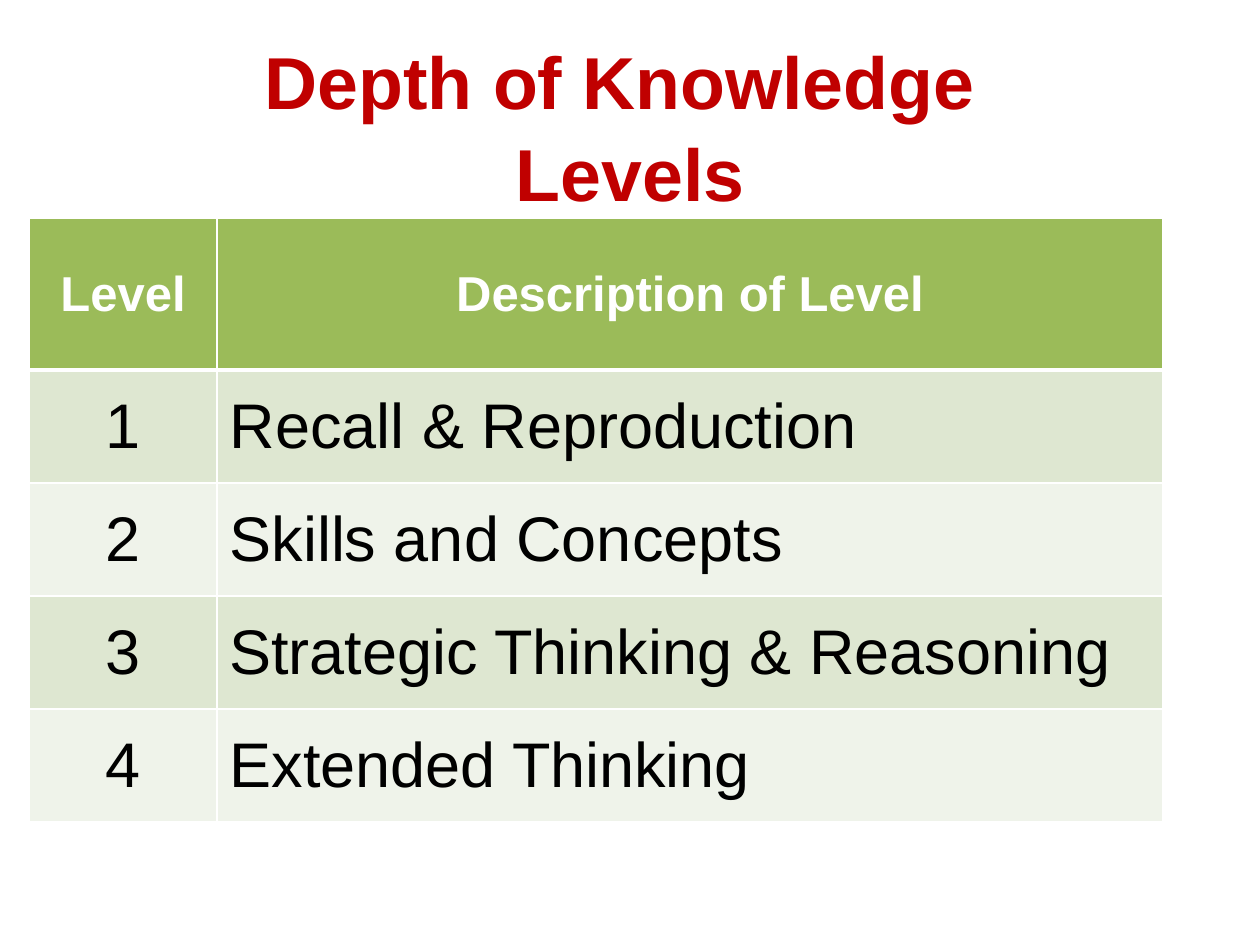
from lxml.etree import SubElement
from pptx import Presentation
from pptx.dml.color import RGBColor
from pptx.enum.text import MSO_ANCHOR, MSO_AUTO_SIZE, PP_ALIGN
from pptx.oxml.ns import qn
from pptx.util import Pt

PX = 914400 / 126
LEVELS = [
    ("Level", "Description of Level"),
    ("1", "Recall & Reproduction"),
    ("2", "Skills and Concepts"),
    ("3", "Strategic Thinking & Reasoning"),
    ("4", "Extended Thinking"),
]
HEADER_FONT = {"name": "Arial", "size": Pt(28), "bold": True}
BODY_FONT = {"name": "Arial", "size": Pt(36), "bold": False}
TITLE_FONT = {"name": "Arial", "size": Pt(42), "bold": True}


def px(length):
    return round(length * PX)


def rgb(code):
    return RGBColor.from_string(code)


def apply(target, values):
    for name, value in values.items():
        setattr(target, name, value)


def format_font(font, values, color):
    apply(font, values)
    font.color.rgb = rgb(color)


def add_borders(cell, widths, color):
    properties = cell._tc.get_or_add_tcPr()
    for side, width in widths.items():
        line = SubElement(properties, qn(f"a:ln{side}"), w=str(Pt(width)))
        fill = SubElement(line, qn("a:solidFill"))
        SubElement(fill, qn("a:srgbClr"), val=color)


def place_title(slide, left, top, width, height):
    title = slide.shapes.title
    apply(title, {"left": px(left), "top": px(top),
                  "width": px(width), "height": px(height)})
    frame = title.text_frame
    apply(frame, {"margin_left": 0, "margin_top": 0, "margin_right": 0,
                  "margin_bottom": 0, "word_wrap": True,
                  "auto_size": MSO_AUTO_SIZE.NONE,
                  "vertical_anchor": MSO_ANCHOR.MIDDLE})
    frame.text = "Depth of Knowledge \vLevels"
    heading = frame.paragraphs[0]
    apply(heading, {"alignment": PP_ALIGN.CENTER, "line_spacing": 1.05})
    for run in heading.runs:
        format_font(run.font, TITLE_FONT, "C00000")


def place_levels(slide, left, top, width, height):
    level_width, header_height = 188, 152
    row_height = (height - header_height) // (len(LEVELS) - 1)
    table = slide.shapes.add_table(
        len(LEVELS), 2, px(left), px(top), px(width), px(height)).table
    table.columns[0].width = px(level_width)
    table.columns[1].width = px(width - level_width)
    for row, entries in enumerate(LEVELS):
        header = row == 0
        table.rows[row].height = px(header_height if header else row_height)
        band = "9BBB59" if header else ("EFF3EA", "DEE7D1")[row % 2]
        widths = {"L": 1, "R": 1, "T": 3 if row == 1 else 1,
                  "B": 3 if header else 1}
        for column, entry in enumerate(entries):
            cell = table.cell(row, column)
            cell.text = entry
            cell.vertical_anchor = MSO_ANCHOR.MIDDLE
            add_borders(cell, widths, "FFFFFF")
            cell.fill.solid()
            cell.fill.fore_color.rgb = rgb(band)
            paragraph = cell.text_frame.paragraphs[0]
            centred = header or column == 0
            paragraph.alignment = PP_ALIGN.CENTER if centred else PP_ALIGN.LEFT
            format_font(paragraph.runs[0].font,
                        HEADER_FONT if header else BODY_FONT,
                        "FFFFFF" if header else "000000")


def main():
    presentation = Presentation()
    apply(presentation, {"slide_width": px(1260), "slide_height": px(945)})
    slide = presentation.slides.add_slide(presentation.slide_layouts[5])
    place_title(slide, 63, 35, 1134, 178)
    place_levels(slide, 29, 218, 1134, 606)
    presentation.save("out.pptx")


if __name__ == "__main__":
    main()
